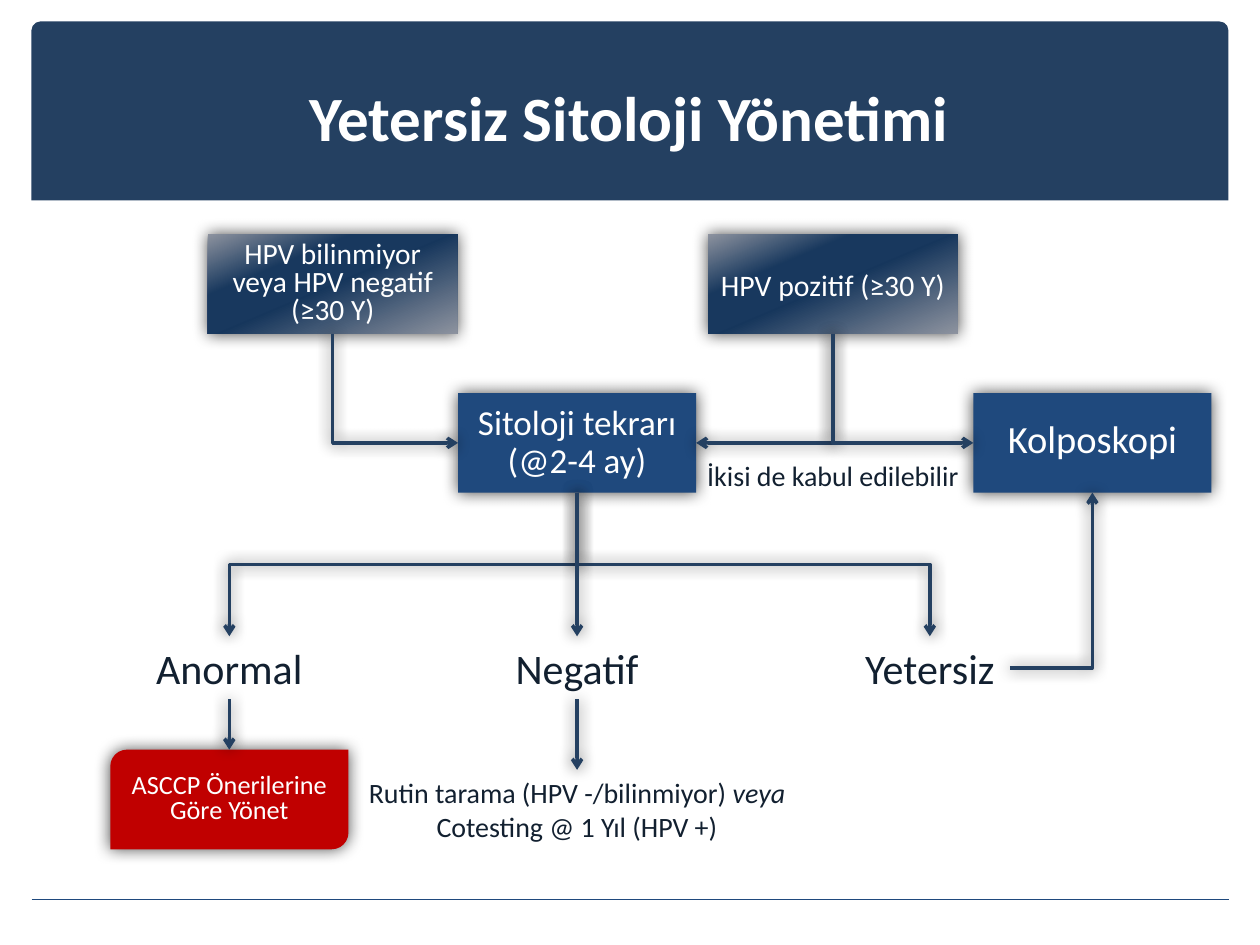
import pptx
import pptx.util
import pptx.dml.color
import pptx.enum.shapes
import pptx.enum.text
import pptx.oxml
import pptx.oxml.ns

Inches = pptx.util.Inches
RGBColor = pptx.dml.color.RGBColor
Shape = pptx.enum.shapes.MSO_SHAPE
Connector = pptx.enum.shapes.MSO_CONNECTOR
qn = pptx.oxml.ns.qn

NAVY = RGBColor(0x24, 0x40, 0x61)
BLUE = RGBColor(0x1F, 0x49, 0x7D)
RED = RGBColor(0xC0, 0x00, 0x00)
WHITE = RGBColor(0xFF, 0xFF, 0xFF)
INK = RGBColor(0x12, 0x20, 0x30)
GRAY = RGBColor(0x8D, 0x93, 0x9F)
STEEL = RGBColor(0x18, 0x38, 0x5E)
DEEP = RGBColor(0x16, 0x36, 0x5C)
GRADIENT = [(0, GRAY), (30, STEEL), (50, DEEP), (100, GRAY)]
FONT = "Calibri"

TITLE = "Yetersiz Sitoloji Yönetimi"
COLUMNS = {"abnormal": 1.82, "unknown": 2.64, "negative": 4.58,
           "positive": 6.61, "unsatisfactory": 7.38, "colposcopy": 8.67}
ROWS = {"hpv": 1.86, "test": 3.12, "note": 3.59, "result": 5.05,
        "manage": 5.95, "routine": 6.11}
BOX_HEIGHT = 0.79
LABEL_HEIGHT = 0.5

BOXES = {
    "unknown": ("HPV bilinmiyor veya HPV negatif (≥30 Y)", Shape.RECTANGLE,
                "unknown", "hpv", 1.98, 16.8, 0.8, GRADIENT),
    "positive": ("HPV pozitif (≥30 Y)", Shape.RECTANGLE,
                 "positive", "hpv", 1.98, 17, 1, GRADIENT),
    "repeat": ("Sitoloji tekrarı (@2-4 ay)", Shape.RECTANGLE,
               "negative", "test", 1.89, 20, 0.9, BLUE),
    "colposcopy": ("Kolposkopi", Shape.RECTANGLE,
                   "colposcopy", "test", 1.89, 22, 0.8, BLUE),
    "manage": ("ASCCP Önerilerine Göre Yönet", Shape.ROUND_2_DIAG_RECTANGLE,
               "abnormal", "manage", 1.89, 15, 0.8, RED),
}
LABELS = {
    "abnormal": ([["Anormal"]], "abnormal", "result", 1.38, LABEL_HEIGHT, 24),
    "negative": ([["Negatif"]], "negative", "result", 1.2, LABEL_HEIGHT, 24),
    "unsatisfactory": ([["Yetersiz"]], "unsatisfactory", "result", 1.27, LABEL_HEIGHT, 24),
    "routine": ([["Rutin tarama (HPV -/bilinmiyor) ", "veya"], ["Cotesting @ 1 Yıl (HPV +)"]],
                "negative", "routine", 3.6, 0.64, 16),
    "note": ([["İkisi de kabul edilebilir"]], "positive", "note", 2.22, 0.37, 16),
}
STRAIGHT_LINKS = [("repeat", "negative"), ("abnormal", "manage"), ("negative", "routine")]
SIDE_LINKS = [("positive", "repeat"), ("unknown", "repeat"), ("positive", "colposcopy")]
BRANCH_LINKS = [("repeat", "abnormal"), ("repeat", "unsatisfactory")]


def add_shadow(effects, blur, alpha):
    shadow = effects.makeelement(qn("a:outerShdw"), {
        "blurRad": str(pptx.util.Pt(blur)), "dist": "0", "algn": "ctr", "rotWithShape": "0"})
    color = shadow.makeelement(qn("a:srgbClr"), {"val": "000000"})
    color.append(color.makeelement(qn("a:alpha"), {"val": str(alpha * 1000)}))
    shadow.append(color)
    effects.append(shadow)


def fill_shape(shape, fill):
    if isinstance(fill, RGBColor):
        shape.fill.solid()
        shape.fill.fore_color.rgb = fill
    else:
        stops = "".join(f'<a:gs pos="{position * 1000}"><a:srgbClr val="{color}"/></a:gs>'
                        for position, color in fill)
        gradient = pptx.oxml.parse_xml(
            f'<a:gradFill {pptx.oxml.ns.nsdecls("a")} rotWithShape="1"><a:gsLst>{stops}</a:gsLst>'
            f'<a:lin ang="{67 * 60000}" scaled="0"/></a:gradFill>')
        shape.element.spPr.find(qn("a:prstGeom")).addnext(gradient)
    shape.line.fill.background()
    shape.shadow.inherit = False


def format_paragraph(paragraph, size, color, spacing=None):
    paragraph.alignment = pptx.enum.text.PP_ALIGN.CENTER
    paragraph.line_spacing = spacing
    for run in paragraph.runs:
        run.font.name = FONT
        run.font.size = pptx.util.Pt(size)
        run.font.color.rgb = color


def add_box(slide, text, kind, column, row, width, size, spacing, fill):
    box = slide.shapes.add_shape(kind, Inches(COLUMNS[column] - width / 2), Inches(ROWS[row]),
                                 Inches(width), Inches(BOX_HEIGHT))
    fill_shape(box, fill)
    add_shadow(box.element.spPr.find(qn("a:effectLst")), 9.4, 70)
    frame = box.text_frame
    frame.text = text
    frame.word_wrap = True
    frame.margin_left = frame.margin_right = Inches(0.09)
    frame.vertical_anchor = pptx.enum.text.MSO_ANCHOR.MIDDLE
    format_paragraph(frame.paragraphs[0], size, WHITE, spacing)
    return box


def add_label(slide, lines, column, row, width, height, size):
    label = slide.shapes.add_textbox(Inches(COLUMNS[column] - width / 2), Inches(ROWS[row]),
                                     Inches(width), Inches(height))
    frame = label.text_frame
    frame.word_wrap = False
    for index, parts in enumerate(lines):
        paragraph = frame.add_paragraph() if index else frame.paragraphs[0]
        for part in parts:
            run = paragraph.add_run()
            run.text = part
            run.font.italic = part == "veya"
        format_paragraph(paragraph, size, INK)
    return label


def format_arrow(connector):
    connector.line.color.rgb = NAVY
    connector.line.width = pptx.util.Pt(2)
    properties = connector.element.spPr
    outline = properties.find(qn("a:ln"))
    outline.append(outline.makeelement(qn("a:tailEnd"), {"type": "arrow"}))
    effects = properties.makeelement(qn("a:effectLst"), {})
    properties.append(effects)
    add_shadow(effects, 8.7, 65)


def add_elbow(slide, start, end, preset, turned=True):
    (x1, y1), (x2, y2) = start, end
    corners = (x1, y1, x2, y2)
    direction = 1 if x2 < x1 else -1
    if turned:
        middle_x, middle_y = (x1 + x2) / 2, (y1 + y2) / 2
        half_width, half_height = direction * (y2 - y1) / 2, abs(x2 - x1) / 2
        corners = (middle_x - half_width, middle_y - half_height,
                   middle_x + half_width, middle_y + half_height)
    connector = slide.shapes.add_connector(Connector.ELBOW, *(int(value) for value in corners))
    properties = connector.element.spPr
    properties.find(qn("a:prstGeom")).set("prst", preset)
    if turned:
        properties.find(qn("a:xfrm")).set("rot", str((90 if direction > 0 else 270) * 60000))
    format_arrow(connector)


def side_point(shape, across, down):
    return shape.left + shape.width * across, shape.top + shape.height * down


def add_frame(slide):
    banner = slide.shapes.add_shape(Shape.ROUND_2_SAME_RECTANGLE, Inches(0.25), Inches(0.17),
                                    Inches(9.5), Inches(1.42))
    banner.adjustments[0] = 0.05
    fill_shape(banner, NAVY)
    slide.shapes.element.insert(2, banner.element)
    rule = slide.shapes.add_connector(Connector.STRAIGHT, Inches(0.25), Inches(7.14),
                                      Inches(9.75), Inches(7.14))
    rule.line.color.rgb = BLUE
    rule.line.width = pptx.util.Pt(1)
    properties = rule.element.spPr
    properties.append(properties.makeelement(qn("a:effectLst"), {}))
    title = slide.shapes.title
    title.left, title.top, title.width, title.height = map(Inches, (0.33, 0.3, 9.33, 1.25))
    title.text_frame.text = TITLE
    title.text_frame.vertical_anchor = pptx.enum.text.MSO_ANCHOR.MIDDLE
    format_paragraph(title.text_frame.paragraphs[0], 36, WHITE)
    title.text_frame.paragraphs[0].runs[0].font.bold = True


def main():
    presentation = pptx.Presentation()
    presentation.slide_width, presentation.slide_height = Inches(10), Inches(7.5)
    slide = presentation.slides.add_slide(presentation.slide_layouts[5])
    add_frame(slide)
    nodes = {name: add_box(slide, *box) for name, box in BOXES.items()}
    nodes.update({name: add_label(slide, *label) for name, label in LABELS.items()})
    for source, target in SIDE_LINKS:
        start, end = nodes[source], nodes[target]
        add_elbow(slide, side_point(start, 0.5, 1),
                  side_point(end, 1 if end.left < start.left else 0, 0.5), "bentConnector2")
    for source, target in BRANCH_LINKS:
        add_elbow(slide, side_point(nodes[source], 0.5, 1),
                  side_point(nodes[target], 0.5, 0), "bentConnector3")
    add_elbow(slide, side_point(nodes["unsatisfactory"], 1, 0.5),
              side_point(nodes["colposcopy"], 0.5, 1), "bentConnector2", turned=False)
    for source, target in STRAIGHT_LINKS:
        connector = slide.shapes.add_connector(Connector.STRAIGHT, 0, 0, 0, 0)
        connector.begin_connect(nodes[source], 2)
        connector.end_connect(nodes[target], 0 if target != "manage" else 3)
        if target == "manage":
            connector.end_x, connector.end_y = map(int, side_point(nodes[target], 0.5, 0))
        format_arrow(connector)
    presentation.save("out.pptx")


if __name__ == "__main__":
    main()
